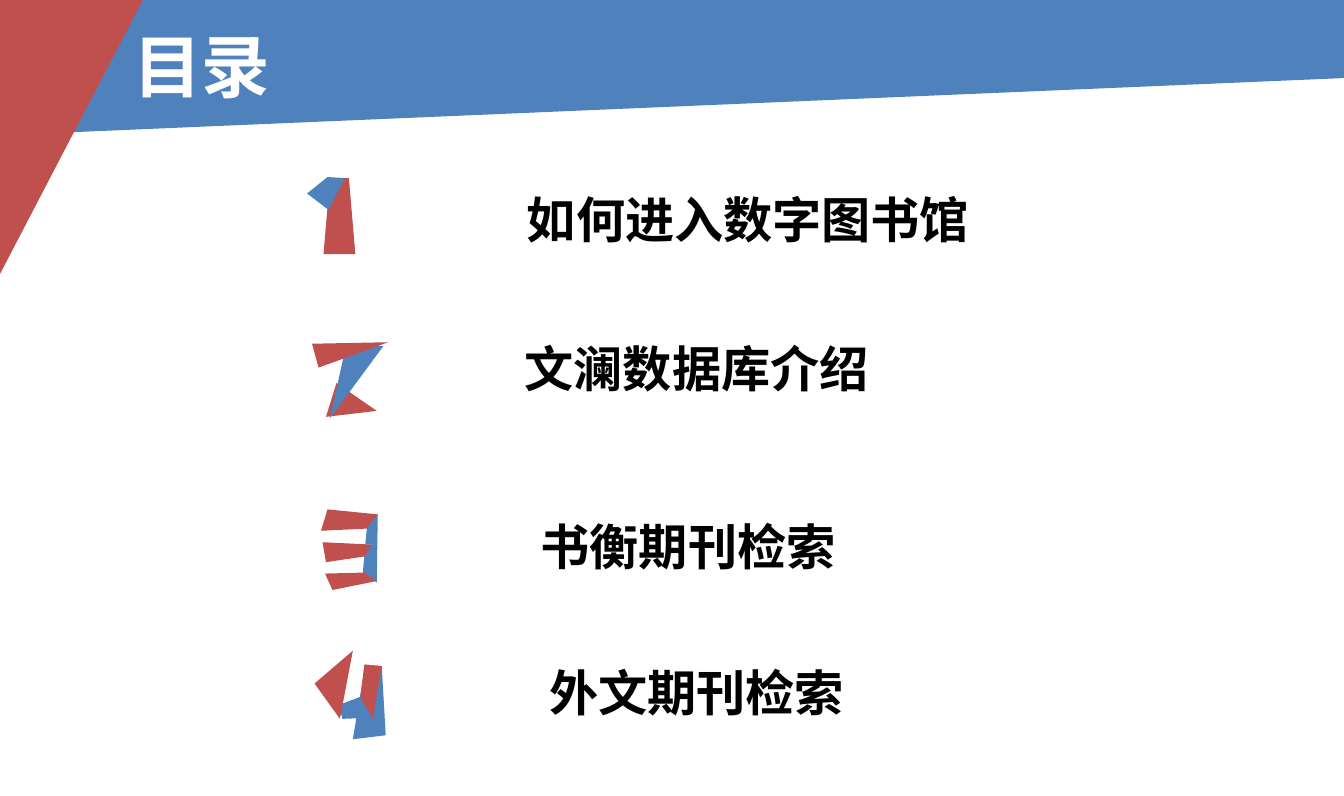
from lxml import etree
from pptx import Presentation
from pptx.dml.color import RGBColor
from pptx.enum.text import MSO_ANCHOR, PP_ALIGN
from pptx.oxml.ns import qn
from pptx.util import Cm, Pt

BLUE = RGBColor(0x4F, 0x81, 0xBD)
RED = RGBColor(0xC0, 0x50, 0x4D)
WHITE = RGBColor(0xFF, 0xFF, 0xFF)
BLACK = RGBColor(0, 0, 0)
FONT = "Noto Sans CJK SC"
LEFT, CENTER = PP_ALIGN.LEFT, PP_ALIGN.CENTER
TOP = MSO_ANCHOR.TOP

deck = Presentation()
deck.slide_width, deck.slide_height = Cm(27), Cm(16)
page = deck.slides.add_slide(deck.slide_layouts[6])


def add_polygon(shapes, color, points):
    start, *others = [(Cm(x), Cm(y)) for x, y in points]
    builder = shapes.build_freeform(*start)
    builder.add_line_segments(others, close=True)
    polygon = builder.convert_to_shape()
    polygon.shadow.inherit = False
    polygon.fill.solid()
    polygon.fill.fore_color.rgb = color
    polygon.line.fill.background()


def add_text(text, left, top, width, height=1.42, size=28, color=BLACK, align=CENTER):
    box = page.shapes.add_textbox(Cm(left), Cm(top), Cm(width), Cm(height))
    frame = box.text_frame
    frame.word_wrap = True
    frame.vertical_anchor = TOP
    frame.margin_left = frame.margin_right = Cm(0.24)
    frame.margin_top = frame.margin_bottom = Cm(0.12)
    para = frame.paragraphs[0]
    para.alignment = align
    span = para.add_run()
    span.text = text
    span.font.size = Pt(size)
    span.font.bold = True
    span.font.color.rgb = color
    span.font.name = FONT
    etree.SubElement(span._r.get_or_add_rPr(), qn("a:ea"), typeface=FONT)


add_polygon(page.shapes, BLUE, [(0, 0), (27, 0), (27, 1.57), (0, 2.72)])
add_polygon(page.shapes, RED, [(0, 0), (2.87, 0), (0, 5.51)])
add_text("目录", 2.44, 0.36, 24.56, size=39, color=WHITE, align=LEFT)

digit_one = [
    (RED, [(6.63, 3.58), (7.01, 3.58), (7.14, 5.11), (6.5, 5.11)]),
    (BLUE, [(6.17, 3.89), (6.58, 3.56), (6.93, 3.58), (6.6, 4.22)]),
]
digit_two = [
    (RED, [(6.76, 7.7), (7.57, 8.26), (6.55, 8.38)]),
    (BLUE, [(7.7, 6.96), (6.63, 8.41), (6.96, 6.91)]),
    (RED, [(6.27, 6.91), (7.8, 6.88), (6.4, 7.39)]),
]
digit_three = [
    (RED, [(6.48, 10.9), (7.52, 10.95), (7.37, 11.18), (6.55, 11.3)]),
    (RED, [(6.58, 10.24), (7.59, 10.34), (7.52, 10.62), (6.45, 10.67)]),
    (BLUE, [(7.59, 10.34), (7.57, 11.71), (7.29, 11.51), (7.32, 11.18),
            (7.49, 10.95), (7.34, 10.95), (7.37, 10.62)]),
    (RED, [(6.53, 11.53), (7.32, 11.51), (7.57, 11.68), (6.68, 11.86)]),
]
digit_four = [
    (BLUE, [(7.34, 13.36), (7.67, 13.39), (7.75, 14.78), (7.09, 14.86)]),
    (BLUE, [(6.81, 14.17), (7.26, 14), (7.44, 14.43), (6.88, 14.45)]),
    (RED, [(7.09, 13.08), (6.83, 14.45), (6.32, 13.74)]),
    (RED, [(7.32, 13.36), (7.67, 13.39), (7.49, 14.45), (7.24, 14.02)]),
]
entries = [
    (digit_one, "如何进入数字图书馆", 10.21, 3.68, 9.63),
    (digit_two, "文澜数据库介绍", 9.55, 6.68, 8.89),
    (digit_three, "书衡期刊检索", 9.2, 10.26, 9.25),
    (digit_four, "外文期刊检索", 10, 13.2, 7.98),
]
for digit, topic, left, top, width in entries:
    group = page.shapes.add_group_shape()
    for color, points in digit:
        add_polygon(group.shapes, color, points)
    add_text(topic, left, top, width)

deck.save("out.pptx")
